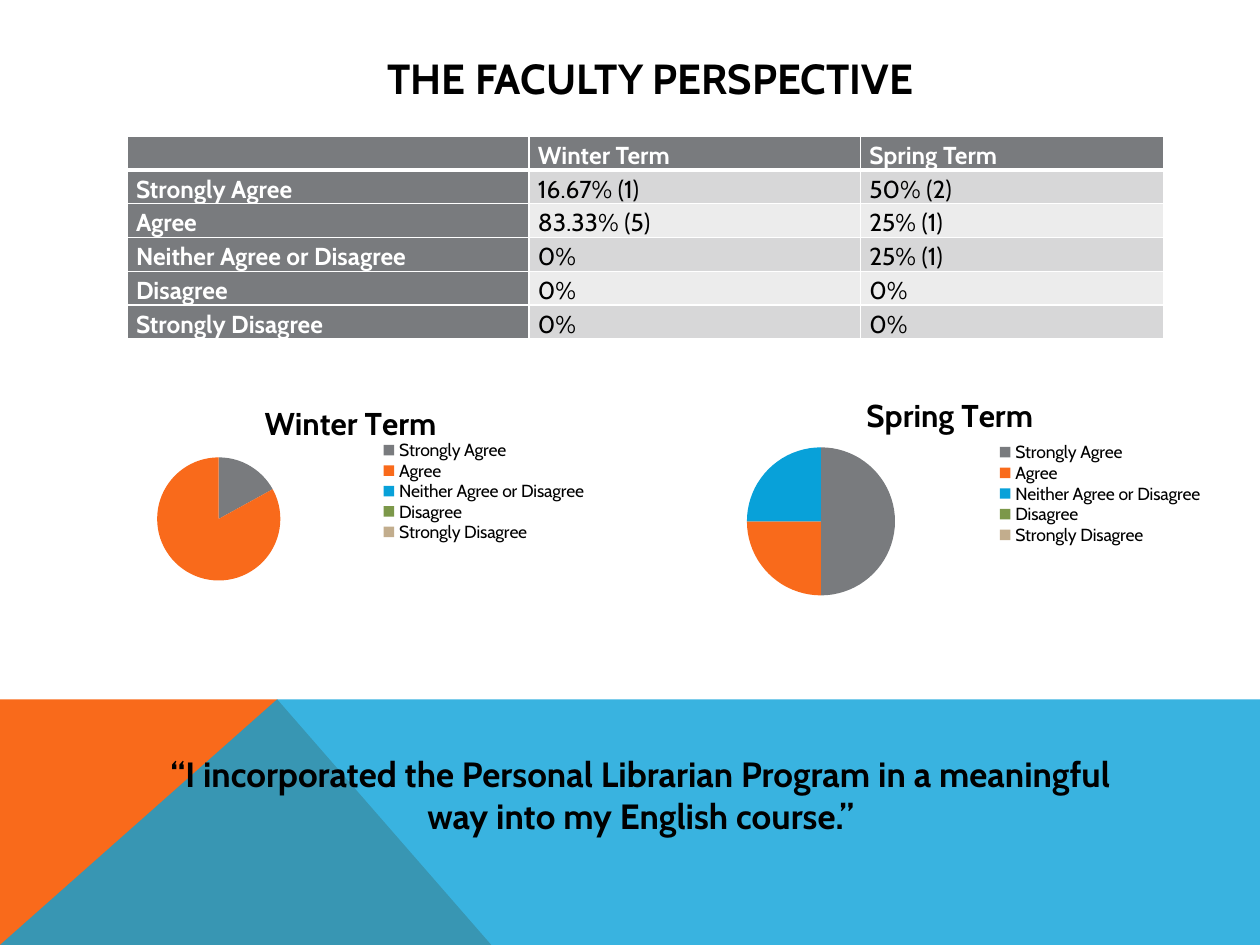
from lxml import etree
from pptx import Presentation
from pptx.chart.data import CategoryChartData
from pptx.dml.color import RGBColor
from pptx.enum.chart import XL_CHART_TYPE as CT, XL_LEGEND_POSITION as LP
from pptx.enum.text import MSO_ANCHOR as VA, PP_ALIGN as PA
from pptx.oxml import parse_xml
from pptx.oxml.ns import nsdecls, qn
from pptx.util import Inches, Pt

GRAY = RGBColor(0x79, 0x7B, 0x7E)
ORANGE = RGBColor(0xF9, 0x6A, 0x1B)
BLUE = RGBColor(0x08, 0xA1, 0xD9)
GREEN = RGBColor(0x7C, 0x98, 0x4A)
TAN = RGBColor(0xC2, 0xAD, 0x8D)
BAND_DARK = RGBColor(0xD7, 0xD7, 0xD8)
BAND_LIGHT = RGBColor(0xEC, 0xEC, 0xEC)
WHITE = RGBColor(0xFF, 0xFF, 0xFF)
BLACK = RGBColor(0, 0, 0)
FONT = "Cabin"

prs = Presentation()
prs.slide_width, prs.slide_height = Inches(10), Inches(7.5)
W, H = prs.slide_width, prs.slide_height
s = prs.slides.add_slide(prs.slide_layouts[5])


def box(left, top, width, height):
    return [round(v * side / 100) for v, side in zip((left, top, width, height), (W, H, W, H))]


def style(p, size, color, bold, align=PA.LEFT):
    f = p.font
    f.name, f.size, f.bold, f.color.rgb = FONT, Pt(size), bold, color
    p.alignment = align


BAND_TOP, PEAK, FOOT = 73.6, 22.3, 39.1
for points, color, alpha in (
    ([(0, 100), (0, BAND_TOP), (PEAK, BAND_TOP), (FOOT, 100)], ORANGE, 100),
    ([(0, 100), (PEAK, BAND_TOP), (100, BAND_TOP), (100, 100)], BLUE, 80),
):
    fb = s.shapes.build_freeform(*points[0], scale=(W / 100, H / 100))
    fb.add_line_segments(points[1:], close=True)
    sp = fb.convert_to_shape()
    sp.shadow.inherit = False
    sp.fill.solid()
    sp.fill.fore_color.rgb = color
    sp.line.fill.background()
    clr = sp.fill._xPr.find(".//" + qn("a:srgbClr"))
    etree.SubElement(clr, qn("a:alpha")).set("val", str(alpha * 1000))

title = s.shapes.title
quote = s.shapes.add_textbox(0, 0, 0, 0)
for sp, place, text, size in (
    (title, (6.2, 4.93, 90.8, 6.67), "THE FACULTY PERSPECTIVE", 24),
    (quote, (11.7, 78.93, 78.3, 10.27),
     "“I incorporated the Personal Librarian Program in a meaningful way into my English course.”", 20),
):
    sp.left, sp.top, sp.width, sp.height = box(*place)
    tf = sp.text_frame
    tf.text = text
    tf.word_wrap = True
    tf.vertical_anchor = VA.MIDDLE if sp is title else VA.TOP
    style(tf.paragraphs[0], size, BLACK, True, PA.CENTER)

CATS = ["Strongly Agree", "Agree", "Neither Agree or Disagree", "Disagree", "Strongly Disagree"]
WINTER = ["16.67% (1)", "83.33% (5)", "0%", "0%", "0%"]
SPRING = ["50% (2)", "25% (1)", "25% (1)", "0%", "0%"]
rows = [("", "Winter Term", "Spring Term"), *zip(CATS, WINTER, SPRING)]
tbl = s.shapes.add_table(len(rows), 3, *box(10.1, 14.4, 82.3, 21.47)).table
for col, share in zip(tbl.columns, (31.9, 26.3, 24.1)):
    col.width = round(share * W / 100)
for i, row in enumerate(rows):
    for j, text in enumerate(row):
        cell = tbl.cell(i, j)
        head = i == 0 or j == 0
        cell.text = text
        cell.margin_left = cell.margin_right = Inches(0.07)
        cell.margin_top = cell.margin_bottom = 0
        cell.fill.solid()
        cell.fill.fore_color.rgb = GRAY if head else BAND_DARK if i % 2 else BAND_LIGHT
        p = cell.text_frame.paragraphs[0]
        p.line_spacing = 1.15
        style(p, 14, WHITE if head else BLACK, head)
        tcPr = cell._tc.get_or_add_tcPr()
        for k, side in enumerate("LRTB"):
            thick = (side == "B" and i == 0) or (side == "T" and i == 1)
            tcPr.insert(k, parse_xml(
                f'<a:ln{side} {nsdecls("a")} w="{Pt(3 if thick else 1)}"><a:solidFill>'
                f'<a:srgbClr val="{WHITE}"/></a:solidFill></a:ln{side}>'))

for name, vals, place, title_at, pie_at, legend_at in (
    ("Winter Term", (17, 83, 0, 0, 0), (6.1, 40, 42.5, 23.33),
     (0.34, 0.08), (0.15, 0.36, 0.23, 0.56), (0.53, 0.28, 0.46, 0.46)),
    ("Spring Term", (50, 25, 25, 0, 0), (52.5, 38.93, 45.2, 26),
     (0.35, 0.08), (0.15, 0.32, 0.26, 0.61), (0.55, 0.3, 0.44, 0.42)),
):
    data = CategoryChartData()
    data.categories = CATS
    data.add_series("Series 1", vals)
    chart = s.shapes.add_chart(CT.PIE, *box(*place), data).chart
    chart.font.name, chart.font.size, chart.font.color.rgb = FONT, Pt(10), BLACK
    chart.has_title = chart.has_legend = True
    tf = chart.chart_title.text_frame
    tf.text = name
    style(tf.paragraphs[0], 18, BLACK, True, PA.CENTER)
    chart.legend.position = LP.RIGHT
    chart.legend.include_in_layout = False
    plot = chart.plots[0]
    plot.vary_by_categories = True
    for i, color in enumerate((GRAY, ORANGE, BLUE, GREEN, TAN)):
        fill = plot.series[0].points[i].format.fill
        fill.solid()
        fill.fore_color.rgb = color
    for tag, shares in (("title", title_at), ("plotArea", pie_at), ("legend", legend_at)):
        part = chart._chartSpace.chart.find(qn("c:" + tag))
        for old in part.findall(qn("c:layout")):
            part.remove(old)
        inner = '<c:layoutTarget val="inner"/>' if tag == "plotArea" else ""
        modes = '<c:xMode val="edge"/><c:yMode val="edge"/>'
        sizes = "".join(f'<c:{k} val="{v}"/>' for k, v in zip("xywh", shares))
        layout = parse_xml(f'<c:layout {nsdecls("c")}><c:manualLayout>{inner}{modes}{sizes}'
                           '</c:manualLayout></c:layout>')
        overlay = part.find(qn("c:overlay"))
        part.insert(0 if overlay is None else part.index(overlay), layout)

prs.save("out.pptx")
